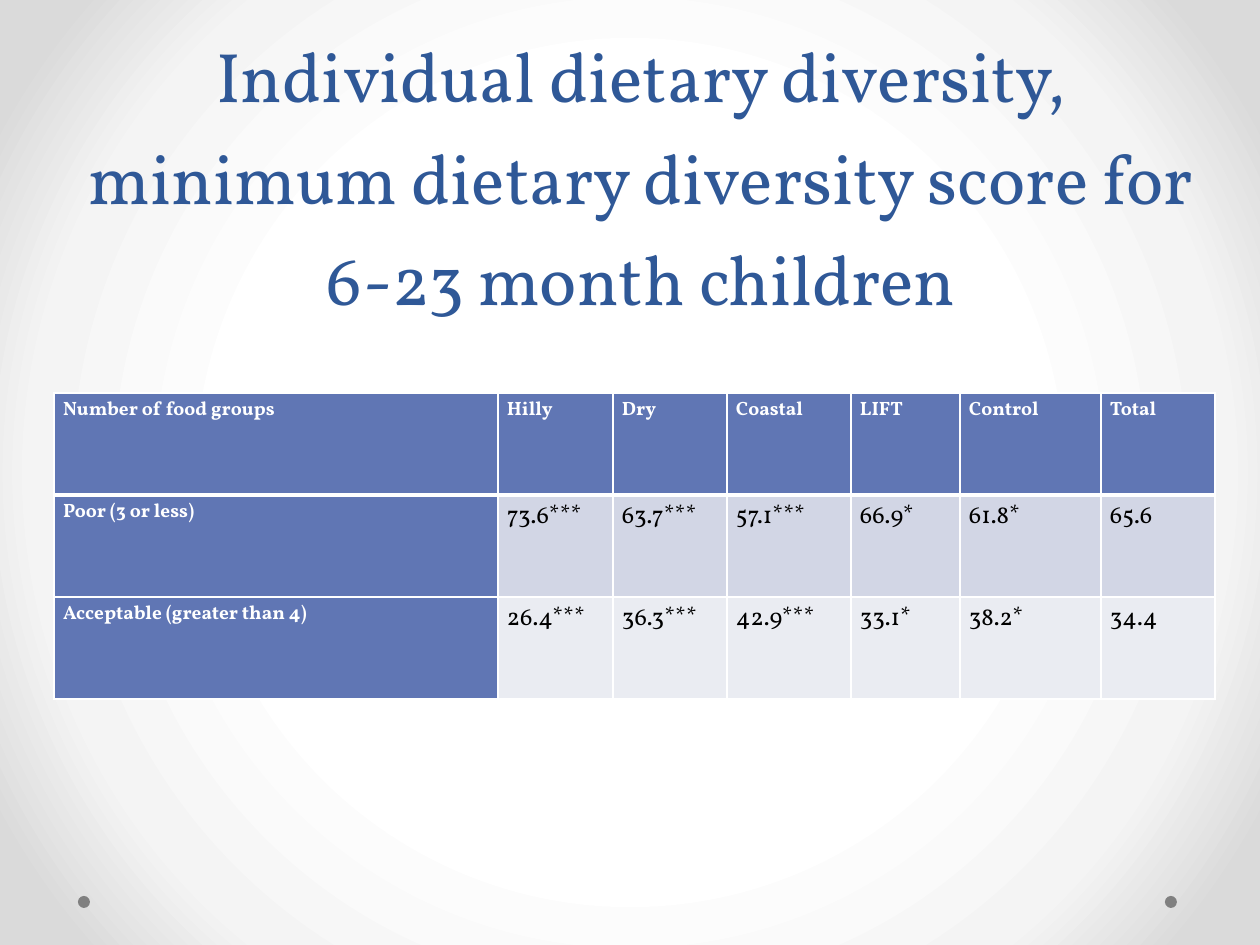
from lxml import etree
from pptx import Presentation
from pptx.dml.color import RGBColor
from pptx.enum.shapes import MSO_SHAPE
from pptx.enum.text import MSO_ANCHOR, MSO_AUTO_SIZE, PP_ALIGN
from pptx.oxml import parse_xml
from pptx.oxml.ns import nsdecls, qn
from pptx.util import Pt

OVAL = MSO_SHAPE.OVAL
BOTTOM = MSO_ANCHOR.BOTTOM
CENTER = PP_ALIGN.CENTER
NO_AUTOFIT = MSO_AUTO_SIZE.NONE

PX = 914400 // 126
FONT = "Vollkorn"
WHITE, BLACK, TITLE_BLUE, HEADER_BLUE = "FFFFFF", "000000", "2F5897", "6076B4"

TITLE = ("Individual dietary diversity, minimum dietary diversity score "
         "for 6-23 month children")
ROWS = [
    ("Number of food groups", "Hilly", "Dry", "Coastal", "LIFT", "Control", "Total"),
    ("Poor (3 or less)", "73.6***", "63.7***", "57.1***", "66.9*", "61.8*", "65.6"),
    ("Acceptable (greater than 4)", "26.4***", "36.3***", "42.9***", "33.1*", "38.2*", "34.4"),
]
ROW_FILLS = [HEADER_BLUE, "D2D6E5", "EAECF2"]
COLUMN_WIDTHS = [444, 115, 114, 124, 109, 141, 114]
ROW_HEIGHT = 102
TABLE_LEFT, TABLE_TOP = 54, 393
GRADIENT_STOPS = [(50, WHITE), (76, "F4F4F4"), (92, "DADADA")]
DOT_LEFTS, DOT_TOP, DOT_SIZE = (1165, 78), 896, 12


def px(*lengths):
    return [length * PX for length in lengths]


def color(hex_value):
    return RGBColor.from_string(hex_value)


def style_font(font, size, hex_value, bold=False):
    font.name, font.size, font.bold = FONT, Pt(size), bold
    font.color.rgb = color(hex_value)


def paint_background(slide):
    """Radial gradient running from the centre to the corners."""
    slide.background.fill.gradient()
    gradient = next(slide.element.iter(qn("a:gradFill")))
    for child in list(gradient):
        gradient.remove(child)
    stops = etree.SubElement(gradient, qn("a:gsLst"))
    for percent, hex_value in GRADIENT_STOPS:
        stop = etree.SubElement(stops, qn("a:gs"), pos=str(percent * 1000))
        etree.SubElement(stop, qn("a:srgbClr"), val=hex_value)
    circle = etree.SubElement(gradient, qn("a:path"), path="circle")
    etree.SubElement(circle, qn("a:fillToRect"), l="50000", t="50000", r="50000", b="50000")


def add_dot(slide, left):
    dot = slide.shapes.add_shape(OVAL, *px(left, DOT_TOP, DOT_SIZE, DOT_SIZE))
    dot.shadow.inherit = False
    dot.fill.solid()
    dot.fill.fore_color.rgb = color("808080")
    dot.line.fill.background()


def set_title(slide):
    title = slide.shapes.title
    title.left, title.top, title.width, title.height = px(74, 106, 1134, 220)
    frame = title.text_frame
    frame.text = TITLE
    frame.word_wrap = True
    frame.auto_size = NO_AUTOFIT
    frame.vertical_anchor = BOTTOM
    para = frame.paragraphs[0]
    para.alignment = CENTER
    para.line_spacing = Pt(58)
    style_font(para.runs[0].font, 40, TITLE_BLUE)


def set_borders(cell, widths):
    properties = cell._tc.get_or_add_tcPr()
    for index, (side, width) in enumerate(widths.items()):
        properties.insert(index, parse_xml(
            f'<a:ln{side} {nsdecls("a")} w="{Pt(width)}"><a:solidFill>'
            f'<a:srgbClr val="{WHITE}"/></a:solidFill></a:ln{side}>'))


def fill_cell(cell, text, row, column):
    is_label = row == 0 or column == 0
    cell.margin_left = cell.margin_right = 9 * PX
    cell.margin_top = cell.margin_bottom = 0
    cell.fill.solid()
    cell.fill.fore_color.rgb = color(HEADER_BLUE if is_label else ROW_FILLS[row])
    top = 3 if row == 1 else 1
    bottom = 3 if row == 0 else 1
    set_borders(cell, {"L": 1, "R": 1, "T": top, "B": bottom})
    cell.text_frame.text = text
    para = cell.text_frame.paragraphs[0]
    para.line_spacing = 1.15
    para.space_after = Pt(2 if column == 0 else 6)
    style_font(para.runs[0].font, 11 if is_label else 14, WHITE if is_label else BLACK, is_label)


def add_score_table(slide):
    size = (sum(COLUMN_WIDTHS), ROW_HEIGHT * len(ROWS))
    table = slide.shapes.add_table(
        len(ROWS), len(COLUMN_WIDTHS), *px(TABLE_LEFT, TABLE_TOP, *size)).table
    for column, width in zip(table.columns, px(*COLUMN_WIDTHS)):
        column.width = width
    for row, texts in enumerate(ROWS):
        table.rows[row].height = ROW_HEIGHT * PX
        for column, text in enumerate(texts):
            fill_cell(table.cell(row, column), text, row, column)


def main():
    deck = Presentation()
    deck.slide_width, deck.slide_height = px(1260, 945)
    slide = deck.slides.add_slide(deck.slide_layouts[5])
    paint_background(slide)
    for left in DOT_LEFTS:
        add_dot(slide, left)
    set_title(slide)
    add_score_table(slide)
    deck.save("out.pptx")


if __name__ == "__main__":
    main()
